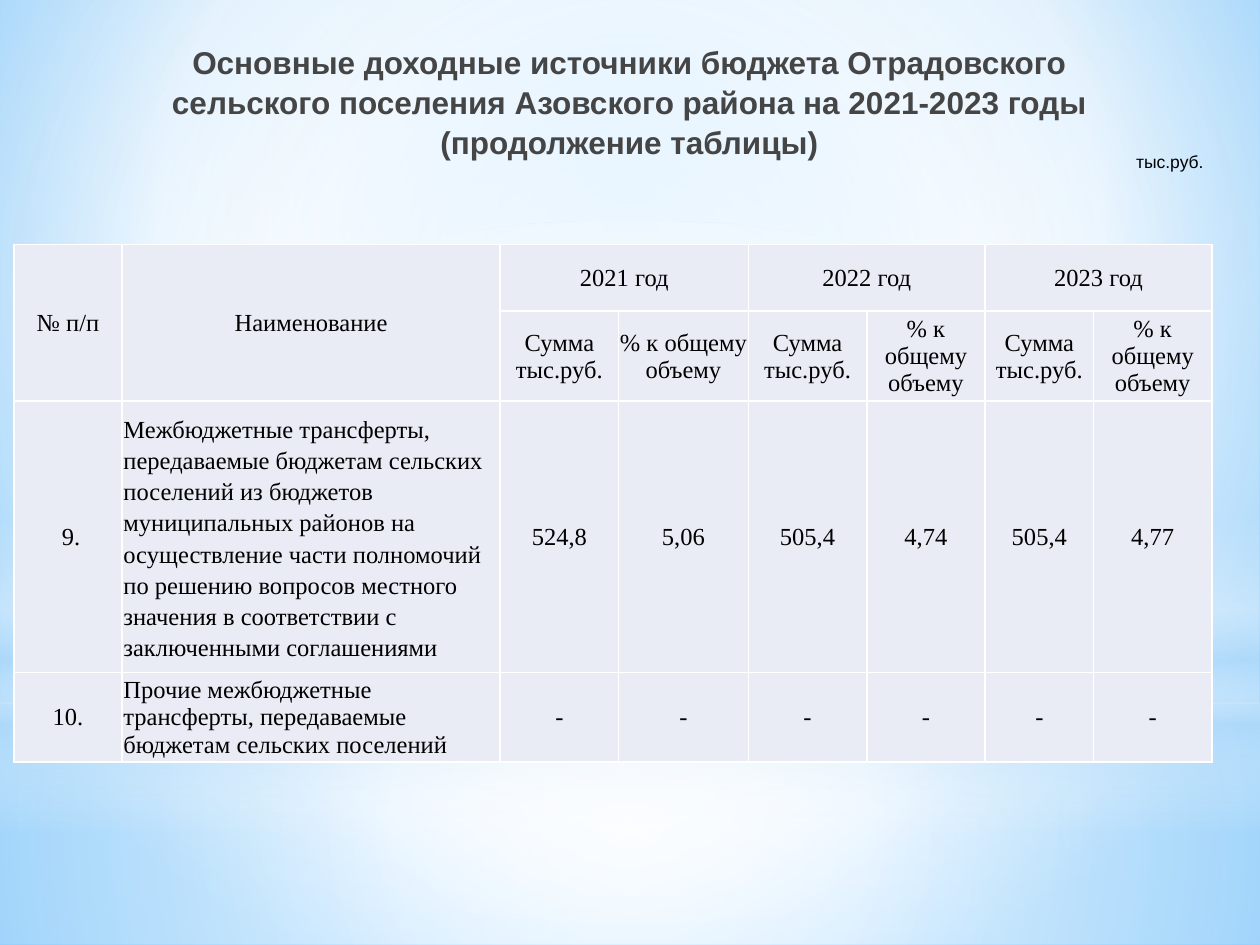
import pptx
import pptx.dml.color
import pptx.enum.shapes
import pptx.enum.text
import pptx.oxml
import pptx.oxml.ns
import pptx.util
from pptx.util import Inches

COLORS = {
    "white": "FFFFFF",
    "pale": "B4DCFA",
    "sky": "9ED5FF",
    "blue": "5BB9FF",
    "title": "454545",
    "text": "000000",
    "cell": "E9EBF5",
}
CENTER = pptx.enum.text.PP_ALIGN.CENTER
LEFT = pptx.enum.text.PP_ALIGN.LEFT
RIGHT = pptx.enum.text.PP_ALIGN.RIGHT
RECTANGLE = pptx.enum.shapes.MSO_SHAPE.RECTANGLE
OVAL = pptx.enum.shapes.MSO_SHAPE.OVAL

RADIAL = '<a:path path="circle"><a:fillToRect l="{}000" t="{}000" r="{}000" b="{}000"/></a:path>'
CENTERED = RADIAL.format(50, 50, 50, 50)
VERTICAL = '<a:lin ang="5400000" scaled="0"/>'

BACKDROP = [(0, "sky", 100), (60, "white", 100), (100, "blue", 100)]
GLOWS = [
    (RECTANGLE, 5.58, 1.92, CENTERED, [(0, "white", 91), (37, "white", 76), (100, "pale", 79)]),
    (RECTANGLE, 0, 5.58, CENTERED, [(0, "white", 89), (48, "white", 62), (100, "pale", 79)]),
    (RECTANGLE, 4.12, 2.5, VERTICAL, [(0, "white", 0), (29, "white", 30), (45, "pale", 40),
                                      (55, "white", 26), (65, "pale", 60), (100, "white", 0)]),
    (OVAL, 1.75, 5.58, CENTERED, [(0, "white", 100), (56, "white", 0)]),
]

TITLE = ("Основные доходные источники бюджета Отрадовского сельского поселения "
         "Азовского района на 2021-2023 годы (продолжение таблицы)")
YEARS = ["2021 год", "2022 год", "2023 год"]
ROWS = [
    ["№ п/п", "Наименование"] + [text for year in YEARS for text in (year, "")],
    ["", ""] + ["Сумма тыс.руб.", "% к общему объему"] * len(YEARS),
    [" 9.", "Межбюджетные трансферты, передаваемые бюджетам сельских поселений из бюджетов "
     "муниципальных районов на осуществление части полномочий по решению вопросов местного "
     "значения в соответствии с заключенными соглашениями",
     "524,8", "5,06", "505,4", "4,74", "505,4", "4,77"],
    ["10.", "Прочие межбюджетные трансферты, передаваемые бюджетам сельских поселений"]
    + ["-"] * 6,
]
COLUMN_WIDTHS = [0.86, 3, 0.94, 1.03, 0.94, 0.94, 0.86, 0.94]
ROW_HEIGHTS = [0.53, 0.71, 2.15, 0.71]


def rgb(name):
    return pptx.dml.color.RGBColor.from_string(COLORS[name])


def set_gradient(fill, element, stops, direction):
    fill.gradient()
    stop_list = "".join(
        f'<a:gs pos="{position * 1000}"><a:srgbClr val="{COLORS[color]}">'
        f'<a:alpha val="{opacity * 1000}"/></a:srgbClr></a:gs>'
        for position, color, opacity in stops)
    gradient = pptx.oxml.parse_xml(
        f'<a:gradFill {pptx.oxml.ns.nsdecls("a")} rotWithShape="1">'
        f'<a:gsLst>{stop_list}</a:gsLst>{direction}</a:gradFill>')
    current = element.find(".//" + pptx.oxml.ns.qn("a:gradFill"))
    current.getparent().replace(current, gradient)


def add_glow(slide, kind, top, height, direction, stops):
    shape = slide.shapes.add_shape(kind, 0, Inches(top), Inches(10), Inches(height))
    shape.shadow.inherit = False
    shape.line.fill.background()
    set_gradient(shape.fill, shape.element, stops, direction)


def format_paragraph(paragraph, alignment, font_name, size, color, bold=False):
    paragraph.alignment = alignment
    for run in paragraph.runs:
        run.font.name = font_name
        run.font.size = pptx.util.Pt(size)
        run.font.bold = bold
        run.font.color.rgb = rgb(color)


def set_title(slide):
    title = slide.shapes.title
    title.left, title.top, title.width, title.height = map(Inches, (1.21, 0.28, 7.57, 1.25))
    frame = title.text_frame
    frame.text = TITLE
    frame.word_wrap = True
    frame.auto_size = pptx.enum.text.MSO_AUTO_SIZE.NONE
    frame.vertical_anchor = pptx.enum.text.MSO_ANCHOR.TOP
    paragraph = frame.paragraphs[0]
    paragraph.line_spacing = 1.05
    format_paragraph(paragraph, CENTER, "Arial", 18, "title", True)
    title.element.getparent().append(title.element)


def add_unit_label(slide):
    label = slide.shapes.add_textbox(Inches(7.92), Inches(1.15), Inches(1.73), Inches(0.27))
    label.text_frame.word_wrap = True
    label.text_frame.text = "тыс.руб."
    format_paragraph(label.text_frame.paragraphs[0], RIGHT, "Arial", 10, "text")


def set_borders(cell):
    properties = cell._tc.get_or_add_tcPr()
    for index, side in enumerate(("lnL", "lnR", "lnT", "lnB")):
        properties.insert(index, pptx.oxml.parse_xml(
            f'<a:{side} {pptx.oxml.ns.nsdecls("a")} w="12700"><a:solidFill>'
            f'<a:srgbClr val="{COLORS["white"]}"/></a:solidFill></a:{side}>'))


def fill_cell(cell, text, alignment):
    cell.fill.solid()
    cell.fill.fore_color.rgb = rgb("cell")
    cell.margin_left = cell.margin_right = cell.margin_top = Inches(0.01)
    cell.margin_bottom = 0
    cell.vertical_anchor = pptx.enum.text.MSO_ANCHOR.MIDDLE
    cell.text_frame.text = text
    format_paragraph(cell.text_frame.paragraphs[0], alignment, "Times New Roman", 14, "text")
    set_borders(cell)


def add_income_table(slide):
    table = slide.shapes.add_table(
        len(ROWS), len(COLUMN_WIDTHS), Inches(0.11), Inches(1.94),
        Inches(sum(COLUMN_WIDTHS)), Inches(sum(ROW_HEIGHTS))).table
    for column, width in zip(table.columns, COLUMN_WIDTHS):
        column.width = Inches(width)
    for row, height in zip(table.rows, ROW_HEIGHTS):
        row.height = Inches(height)
    for row_index, texts in enumerate(ROWS):
        for column_index, text in enumerate(texts):
            is_name = row_index > 1 and column_index == 1
            fill_cell(table.cell(row_index, column_index), text, LEFT if is_name else CENTER)
    table.cell(2, 1).text_frame.paragraphs[0].line_spacing = 1.15
    for column_index in (0, 1):
        table.cell(0, column_index).merge(table.cell(1, column_index))
    for column_index in (2, 4, 6):
        table.cell(0, column_index).merge(table.cell(0, column_index + 1))


def main():
    presentation = pptx.Presentation()
    presentation.slide_width = Inches(10)
    presentation.slide_height = Inches(7.5)
    slide = presentation.slides.add_slide(presentation.slide_layouts[5])
    set_gradient(slide.background.fill, slide.element, BACKDROP, RADIAL.format(20, 10, 20, 60))
    for glow in GLOWS:
        add_glow(slide, *glow)
    set_title(slide)
    add_unit_label(slide)
    add_income_table(slide)
    presentation.save("out.pptx")


if __name__ == "__main__":
    main()
